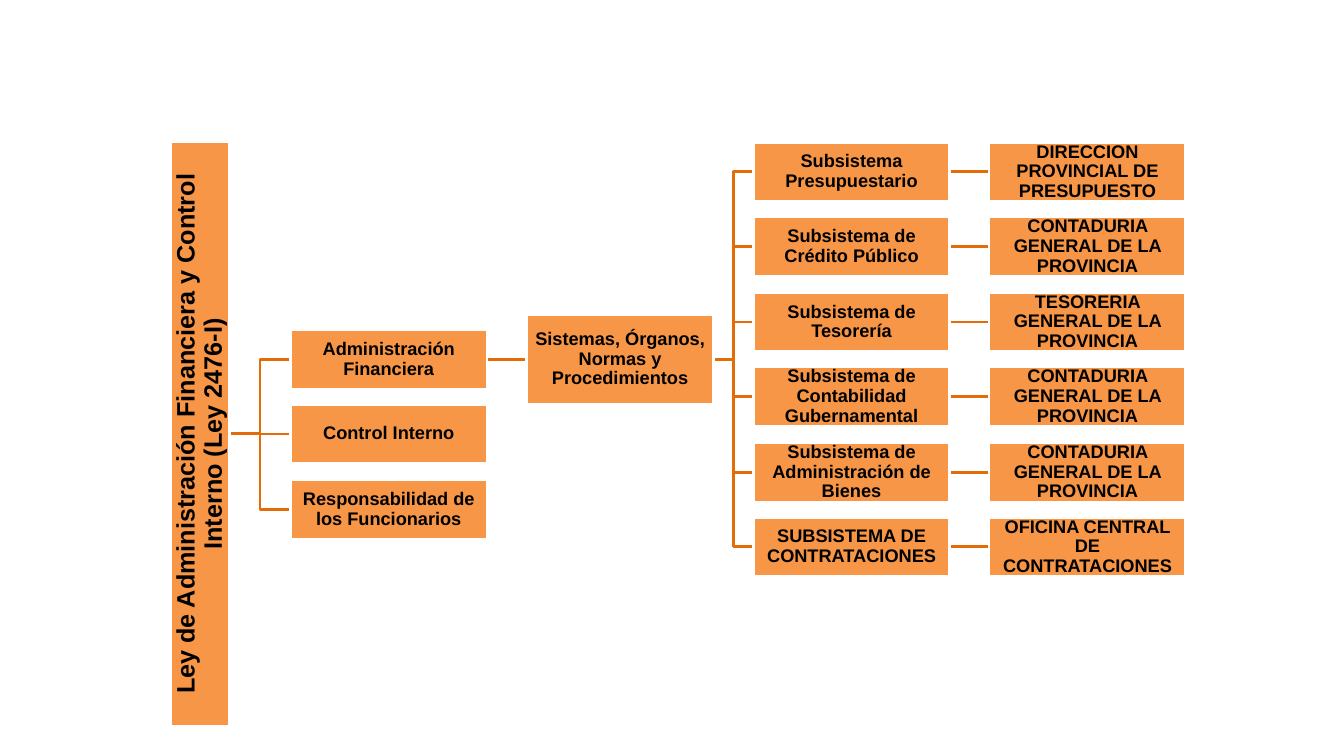
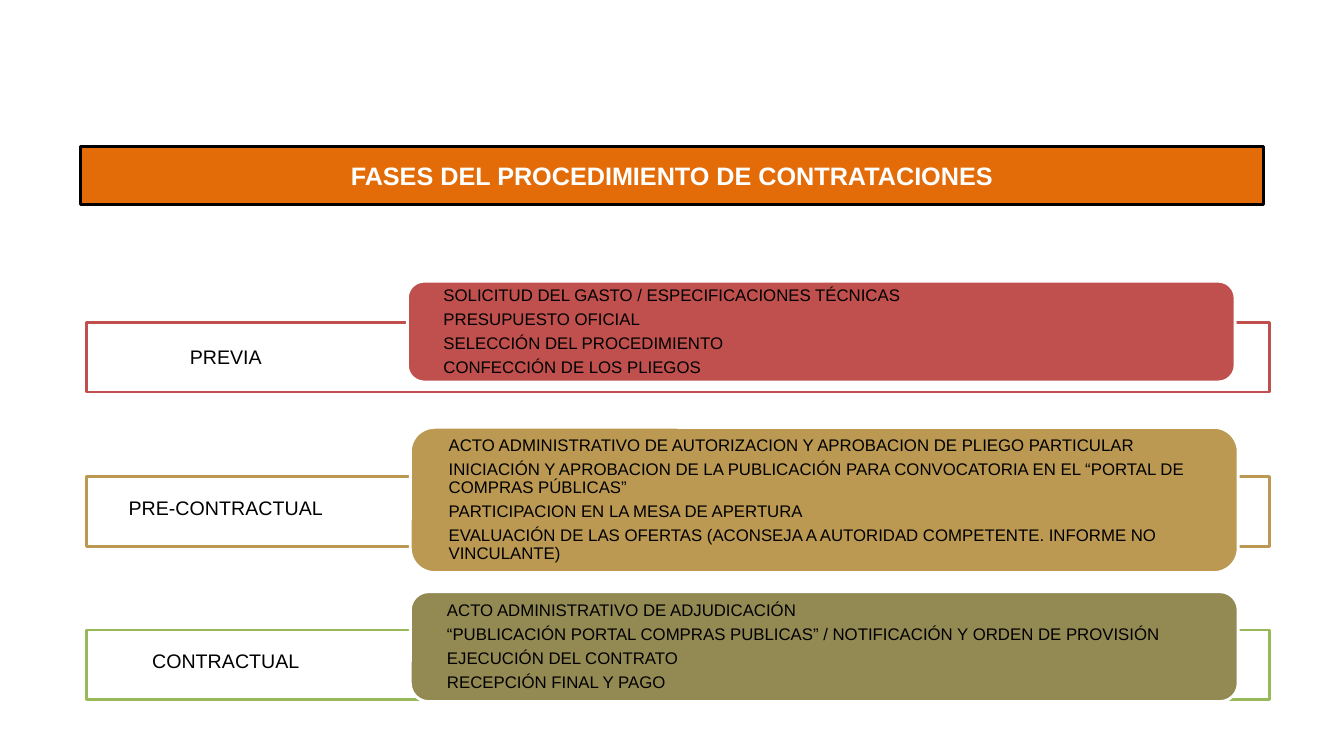
from collections import namedtuple
from dataclasses import dataclass

from lxml.etree import SubElement
from pptx import Presentation
from pptx.dml.color import RGBColor
from pptx.enum.shapes import MSO_CONNECTOR as Connector, MSO_SHAPE as Preset
from pptx.enum.text import MSO_ANCHOR as Anchor, PP_ALIGN as Align
from pptx.oxml.ns import qn
from pptx.util import Pt

PX = 9144  # 100 px to the inch
RIGHT, LEFT = 3, 1  # connection sites of a rectangle


@dataclass(frozen=True)
class Theme:
    font: str = "Arial"
    text: str = "000000"
    paper: str = "FFFFFF"
    box: str = "F79646"
    accent: str = "E36C09"
    red: str = "BF504D"
    gold: str = "BB9952"
    green: str = "99B958"
    olive: str = "938953"
    title_size: int = 18
    label_size: int = 14
    box_size: int = 13
    list_size: int = 12
    line_width: int = 2
    tight: float = 0.9
    list_gap: float = 4.2


Phase = namedtuple("Phase", "name label_top band_top band_color card card_color steps")

# Organisation chart content
BRANCHES = ["Administración Financiera", "Control Interno", "Responsabilidad de los Funcionarios"]
SUBSYSTEMS = [
    ("Subsistema Presupuestario", "DIRECCION PROVINCIAL DE PRESUPUESTO"),
    ("Subsistema de Crédito Público", "CONTADURIA GENERAL DE LA PROVINCIA"),
    ("Subsistema de Tesorería", "TESORERIA GENERAL DE LA PROVINCIA"),
    ("Subsistema de Contabilidad Gubernamental", "CONTADURIA GENERAL DE LA PROVINCIA"),
    ("Subsistema de Administración de Bienes", "CONTADURIA GENERAL DE LA PROVINCIA"),
    ("SUBSISTEMA DE CONTRATACIONES", "OFICINA CENTRAL DE CONTRATACIONES"),
]

# Procurement phases content
PHASES = [
    Phase("PREVIA", 337, 320, Theme.red, (404, 279, 821, 100), Theme.red, [
        "SOLICITUD DEL GASTO / ESPECIFICACIONES TÉCNICAS",
        "PRESUPUESTO OFICIAL",
        "SELECCIÓN DEL PROCEDIMIENTO",
        "CONFECCIÓN DE LOS PLIEGOS",
    ]),
    Phase("PRE-CONTRACTUAL", 487, 473, Theme.gold, (407, 424, 821, 144), Theme.gold, [
        "ACTO ADMINISTRATIVO DE AUTORIZACION Y APROBACION DE PLIEGO PARTICULAR",
        "INICIACIÓN Y APROBACION DE LA PUBLICACIÓN PARA CONVOCATORIA EN EL "
        "“PORTAL DE COMPRAS PÚBLICAS”",
        "PARTICIPACION EN LA MESA DE APERTURA",
        "EVALUACIÓN DE LAS OFERTAS (ACONSEJA A AUTORIDAD COMPETENTE. INFORME NO VINCULANTE)",
    ]),
    Phase("CONTRACTUAL", 638, 625, Theme.green, (407, 587, 821, 109), Theme.olive, [
        "ACTO ADMINISTRATIVO DE ADJUDICACIÓN",
        "“PUBLICACIÓN PORTAL COMPRAS PUBLICAS” / NOTIFICACIÓN Y ORDEN DE PROVISIÓN",
        "EJECUCIÓN DEL CONTRATO",
        "RECEPCIÓN FINAL Y PAGO",
    ]),
]


class Deck:
    """Holds the style and the slide being drawn."""

    def __init__(self, theme):
        self.theme = theme
        self.presentation = Presentation()
        self.presentation.slide_width = 1333 * PX
        self.presentation.slide_height = 750 * PX
        self.slide = None

    def new_slide(self):
        self.slide = self.presentation.slides.add_slide(self.presentation.slide_layouts[6])

    def panel(self, area, fill, line, preset=Preset.RECTANGLE, opacity=100):
        shape = self.slide.shapes.add_shape(preset, *(length * PX for length in area))
        shape.shadow.inherit = False
        shape.fill.solid()
        shape.fill.fore_color.rgb = RGBColor.from_string(fill)
        shape.line.color.rgb = RGBColor.from_string(line)
        shape.line.width = Pt(self.theme.line_width)
        if opacity < 100:
            color = shape._element.spPr.find(qn("a:solidFill"))[0]
            SubElement(color, qn("a:alpha")).set("val", str(opacity * 1000))
        return shape

    def set_text(self, shape, lines, size, color=Theme.text, bold=False, align=Align.CENTER,
                 inset=(0, 0), spacing=1.0, gap=0):
        frame = shape.text_frame
        frame.word_wrap = True
        frame.vertical_anchor = Anchor.MIDDLE
        frame.margin_left = frame.margin_right = inset[0] * PX
        frame.margin_top = frame.margin_bottom = inset[1] * PX
        frame.text = "\n".join(lines)
        for index, paragraph in enumerate(frame.paragraphs):
            paragraph.alignment = align
            paragraph.line_spacing = spacing
            if index and gap:
                paragraph.space_before = Pt(gap)
            for run in paragraph.runs:
                run.font.name = self.theme.font
                run.font.size = Pt(size)
                run.font.bold = bold
                run.font.color.rgb = RGBColor.from_string(color)

    def node(self, area, text, size=Theme.box_size, upward=False):
        theme = self.theme
        shape = self.panel(area, theme.box, theme.paper)
        self.set_text(shape, [text], size, bold=True, inset=(1, 1), spacing=theme.tight)
        if upward:
            shape._element.txBody.find(qn("a:bodyPr")).set("vert", "vert270")
        return shape

    def join(self, source, target):
        """Link the right side of one node to the left side of another."""
        source_middle = source.top + source.height // 2
        target_middle = target.top + target.height // 2
        kind = Connector.STRAIGHT if source_middle == target_middle else Connector.ELBOW
        connector = self.slide.shapes.add_connector(
            kind, source.left + source.width, source_middle, target.left, target_middle)
        connector.begin_connect(source, RIGHT)
        connector.end_connect(target, LEFT)
        connector.line.color.rgb = RGBColor.from_string(self.theme.accent)
        connector.line.width = Pt(self.theme.line_width)
        element = connector._element
        SubElement(element.spPr, qn("a:effectLst"))
        element.getparent().insert(2, element)  # behind the nodes

    def banner(self, area, text):
        theme = self.theme
        shape = self.panel(area, theme.accent, theme.text)
        self.set_text(shape, [text], theme.title_size, theme.paper, bold=True, inset=(10, 5))

    def label(self, area, text):
        shape = self.slide.shapes.add_textbox(*(length * PX for length in area))
        self.set_text(shape, [text], self.theme.label_size)

    def card(self, area, fill, lines):
        theme = self.theme
        shape = self.panel(area, fill, theme.paper, Preset.ROUNDED_RECTANGLE)
        self.set_text(shape, lines, theme.list_size, align=Align.LEFT, inset=(31, 0),
                      spacing=theme.tight, gap=theme.list_gap)


def organisation_slide(deck):
    deck.new_slide()

    def cell(left, half_row):
        return left, 141 + 149 * half_row // 4, 195, 59

    # Law and its three branches
    law = deck.node((169, 140, 59, 581),
                    "Ley de Administración Financiera y Control Interno (Ley 2476-I)",
                    deck.theme.title_size, upward=True)
    branches = [deck.node(cell(288, 5 + 2 * row), text) for row, text in enumerate(BRANCHES)]
    for branch in branches:
        deck.join(law, branch)

    # Systems, subsystems and the office in charge of each
    systems = deck.node((522, 312, 186, 89), "Sistemas, Órganos, Normas y Procedimientos")
    deck.join(branches[0], systems)
    for row, (subsystem_name, office_name) in enumerate(SUBSYSTEMS):
        subsystem = deck.node(cell(747, 2 * row), subsystem_name)
        office = deck.node(cell(981, 2 * row), office_name)
        deck.join(systems, subsystem)
        deck.join(subsystem, office)


def phases_slide(deck):
    deck.new_slide()
    deck.banner((80, 145, 1173, 58), "FASES DEL PROCEDIMIENTO DE CONTRATACIONES")
    for phase in PHASES:
        deck.panel((86, phase.band_top, 1173, 69), deck.theme.paper, phase.band_color, opacity=88)
        deck.card(phase.card, phase.card_color, phase.steps)
        deck.label((117, phase.label_top, 214, 34), phase.name)


def main():
    deck = Deck(Theme())
    organisation_slide(deck)
    phases_slide(deck)
    deck.presentation.save("out.pptx")


if __name__ == "__main__":
    main()
